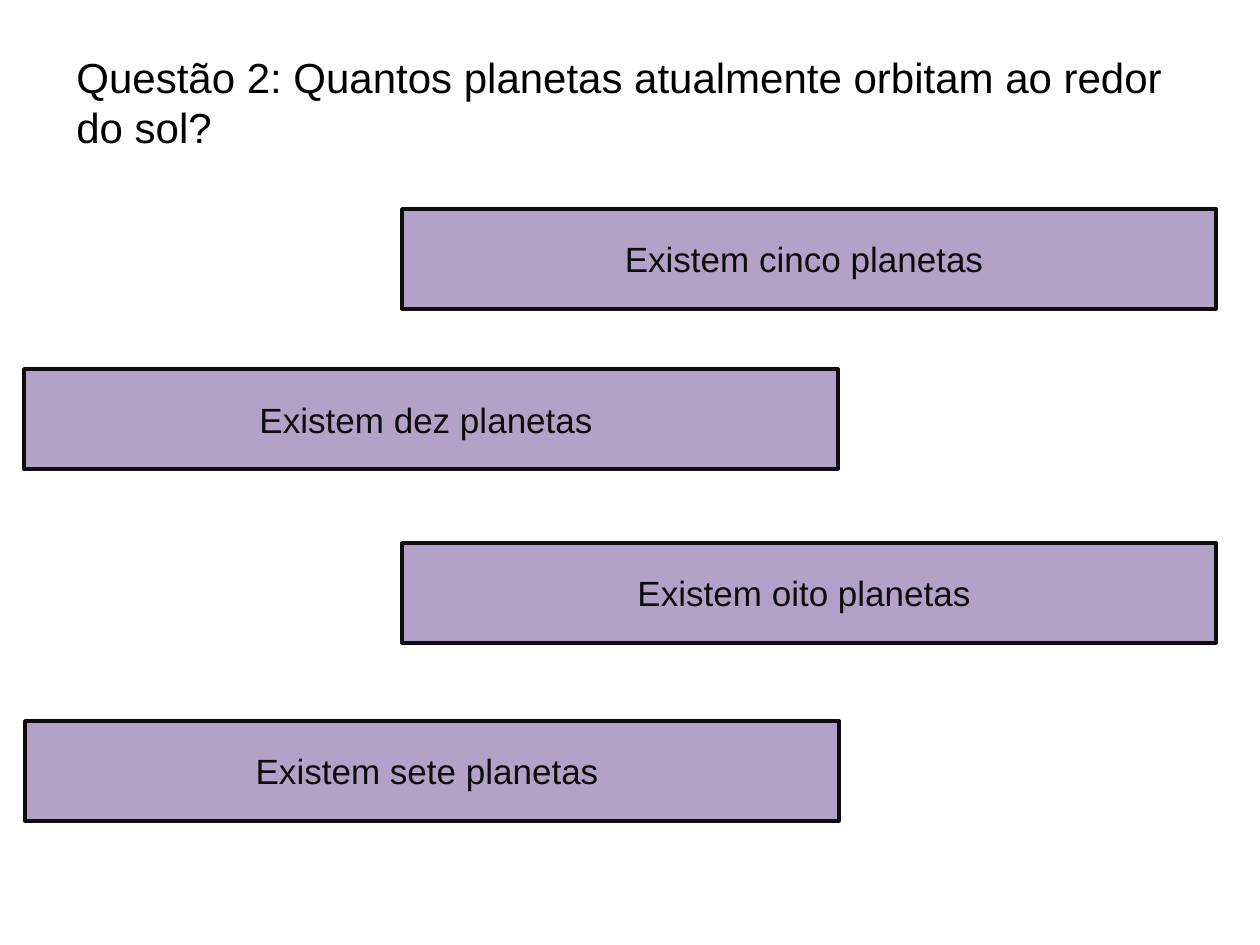
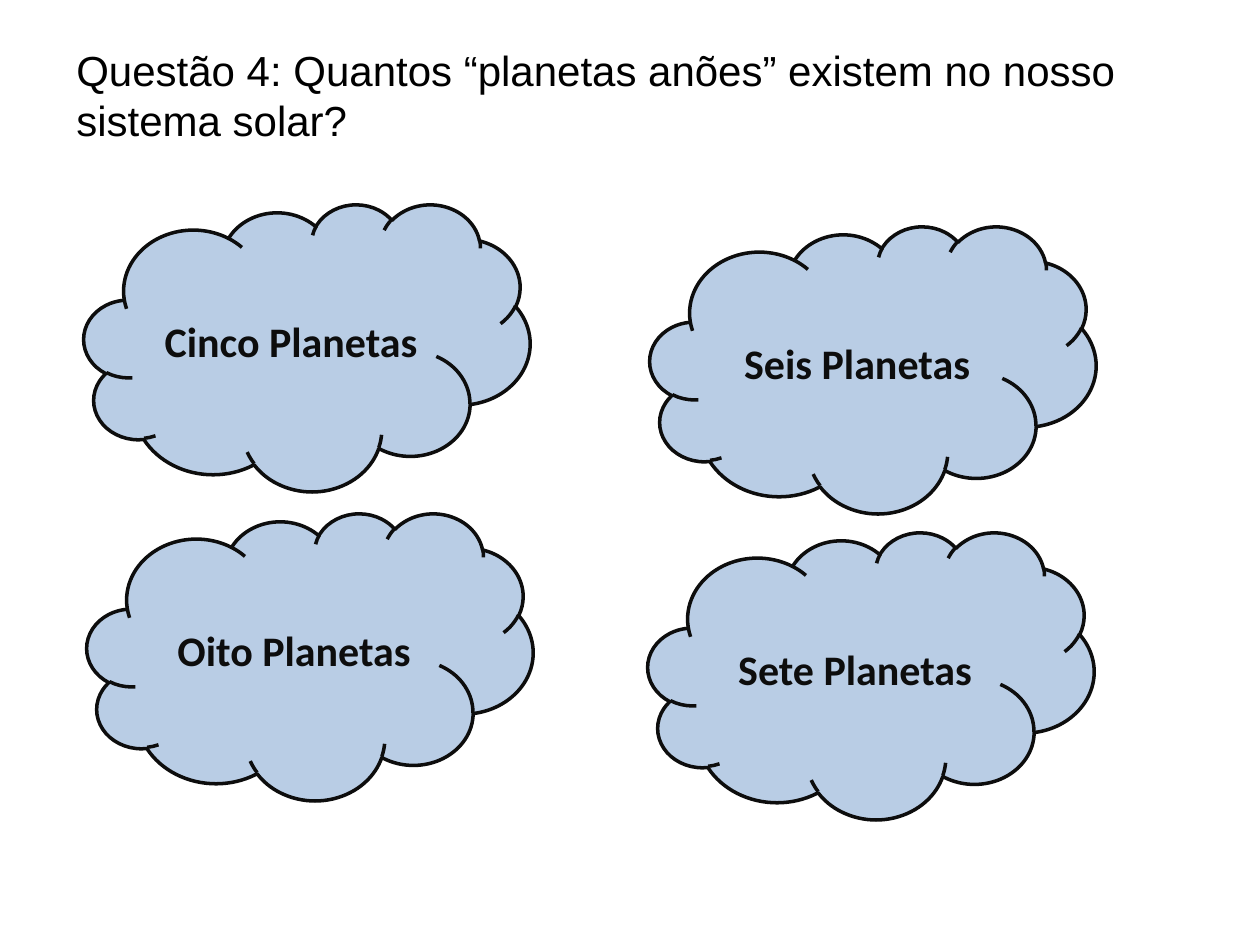
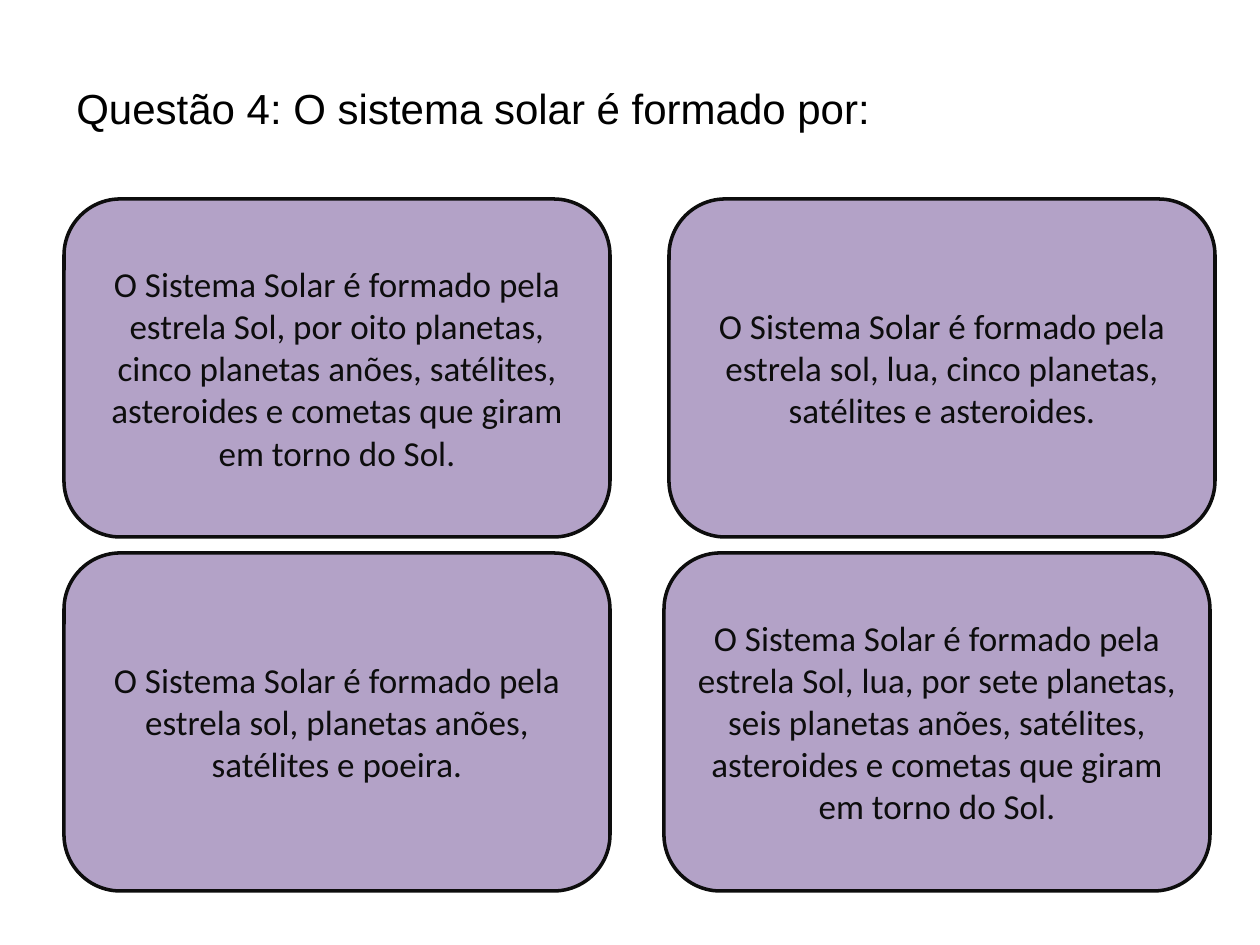
"""Build three quiz slides about the solar system."""
import dataclasses

import pptx
import pptx.dml.color
import pptx.enum.shapes
import pptx.enum.text
import pptx.util

SHAPES = pptx.enum.shapes.MSO_SHAPE
ALIGN = pptx.enum.text.PP_ALIGN
ANCHOR = pptx.enum.text.MSO_ANCHOR
AUTO_SIZE = pptx.enum.text.MSO_AUTO_SIZE

PX_PER_INCH = 126
PAGE_SIZE = (1260, 945)
TITLE_LEFT = 64


@dataclasses.dataclass(frozen=True)
class Theme:
    """Colours, fonts and type sizes of the quiz."""
    background: str = "FFFFFF"
    title: str = "000000"
    ink: str = "0D0D0D"
    purple: str = "B3A2C7"
    blue: str = "B9CDE5"
    heading_font: str = "Arial"
    body_font: str = "Calibri"
    large: int = 24
    medium: int = 20
    outline: int = 2


THEME = Theme()

QUESTIONS = [
    {
        "title": "Questão 2: Quantos planetas atualmente orbitam ao redor do sol?",
        "title_box": (45, 1150, 204),
        "geometry": SHAPES.RECTANGLE,
        "fill": THEME.purple,
        "answer_size": (814, 100),
        "text_format": {"font": THEME.heading_font, "size": THEME.medium},
        "answers": [
            ((402, 209), "Existem cinco planetas "),
            ((24, 369), "Existem dez planetas "),
            ((402, 543), "Existem oito planetas "),
            ((25, 721), "Existem sete planetas "),
        ],
    },
    {
        "title": "Questão 4: Quantos “planetas anões” existem no nosso sistema solar?",
        "title_box": (38, 1131, 115),
        "geometry": SHAPES.CLOUD,
        "fill": THEME.blue,
        "answer_size": (446, 287),
        "text_format": {"font": THEME.body_font, "size": THEME.large, "bold": True},
        "answers": [
            ((84, 204), "Cinco Planetas"),
            ((650, 226), "Seis Planetas"),
            ((87, 513), "Oito Planetas"),
            ((648, 532), "Sete Planetas"),
        ],
    },
    {
        "title": "Questão 4: O sistema solar é formado por:",
        "title_box": (76, 1145, 102),
        "geometry": SHAPES.FLOWCHART_ALTERNATE_PROCESS,
        "fill": THEME.purple,
        "answer_size": (546, 338),
        "text_format": {"font": THEME.body_font, "size": THEME.medium},
        "answers": [
            ((64, 199), "O Sistema Solar é formado pela estrela Sol, por oito planetas, "
                        "cinco planetas anões, satélites, asteroides e cometas que giram "
                        "em torno do Sol."),
            ((669, 199), "O Sistema Solar é formado pela estrela sol, lua, cinco planetas, "
                         "satélites e asteroides."),
            ((64, 553), "O Sistema Solar é formado pela estrela sol, planetas anões, "
                        "satélites e poeira."),
            ((664, 553), "O Sistema Solar é formado pela estrela Sol, lua, por sete planetas, "
                         "seis planetas anões, satélites, asteroides e cometas que giram "
                         "em torno do Sol."),
        ],
    },
]


def px(*lengths):
    """Turn pixel lengths into EMU."""
    return [pptx.util.Inches(length / PX_PER_INCH) for length in lengths]


def rgb(value):
    """Turn a hex string into a colour."""
    return pptx.dml.color.RGBColor.from_string(value)


def write(box, text, *, font, size, color, bold=False, align=ALIGN.LEFT,
          anchor=ANCHOR.TOP, auto_size=AUTO_SIZE.NONE):
    """Put formatted text into a box."""
    frame = box.text_frame
    frame.word_wrap = True
    frame.auto_size = auto_size
    frame.vertical_anchor = anchor
    para = frame.paragraphs[0]
    para.alignment = align
    span = para.add_run()
    span.text = text
    span.font.name = font
    span.font.size = pptx.util.Pt(size)
    span.font.bold = bold
    span.font.color.rgb = rgb(color)


def add_title(page, text, title_box):
    """Add the question at the top of a page."""
    box = page.shapes.add_textbox(*px(TITLE_LEFT, *title_box))
    write(box, text, font=THEME.heading_font, size=THEME.large,
          color=THEME.title, auto_size=AUTO_SIZE.SHAPE_TO_FIT_TEXT)


def add_answer(page, text, position, question):
    """Add one outlined answer in the style of its question."""
    box = page.shapes.add_shape(
        question["geometry"], *px(*position, *question["answer_size"]))
    box.shadow.inherit = False
    box.fill.solid()
    box.fill.fore_color.rgb = rgb(question["fill"])
    box.line.color.rgb = rgb(THEME.ink)
    box.line.width = pptx.util.Pt(THEME.outline)
    write(box, text, color=THEME.ink, align=ALIGN.CENTER,
          anchor=ANCHOR.MIDDLE, **question["text_format"])


def main():
    """Build the deck and save it."""
    deck = pptx.Presentation()
    deck.slide_width, deck.slide_height = px(*PAGE_SIZE)
    for question in QUESTIONS:
        page = deck.slides.add_slide(deck.slide_layouts[6])
        page.background.fill.solid()
        page.background.fill.fore_color.rgb = rgb(THEME.background)
        add_title(page, question["title"], question["title_box"])
        for position, text in question["answers"]:
            add_answer(page, text, position, question)
    deck.save("out.pptx")


if __name__ == "__main__":
    main()
